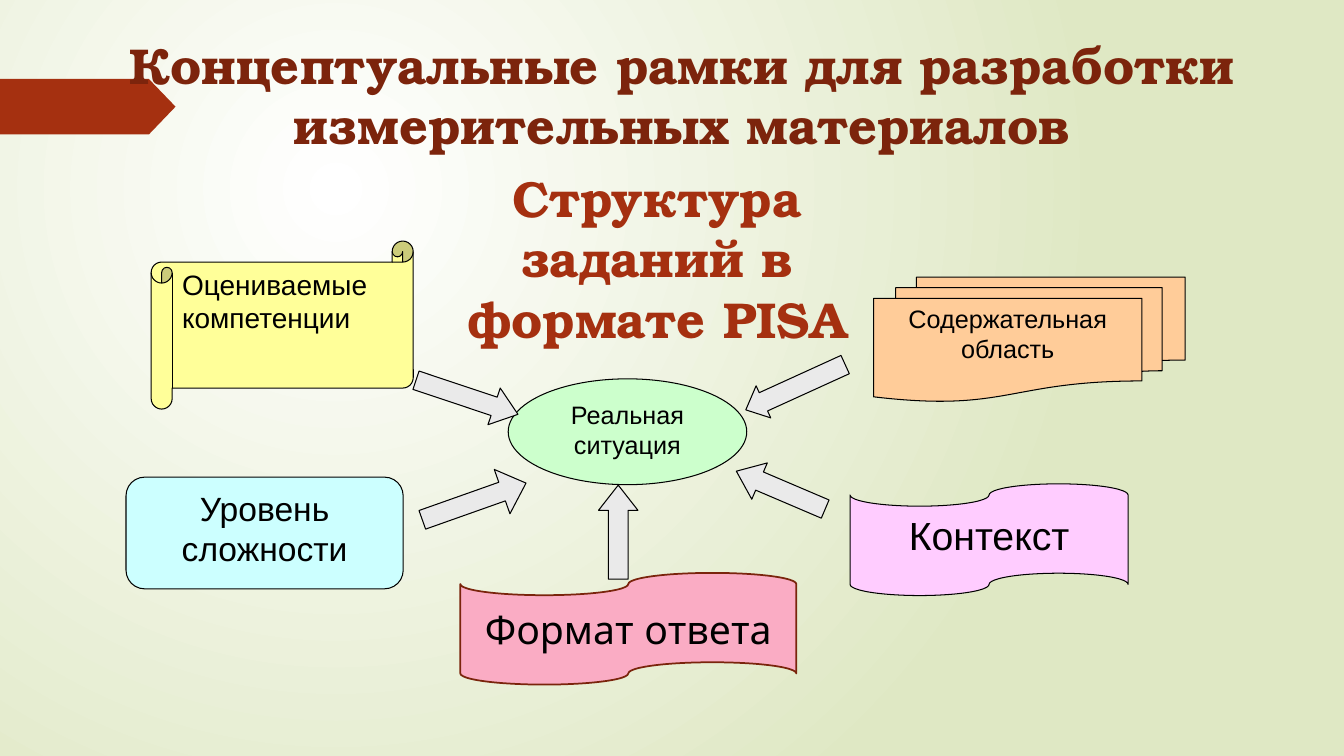
import pptx
import pptx.util
import pptx.dml.color
import pptx.enum.shapes
import pptx.enum.text
import lxml.etree

KIND = pptx.enum.shapes.MSO_SHAPE
ALIGN = pptx.enum.text.PP_ALIGN
ANCHOR = pptx.enum.text.MSO_ANCHOR
COLS, ROWS = 160, 90
CELL = pptx.util.Inches(7.5) / ROWS
SERIF = "TeX Gyre Bonum"


def tint(code):
    return pptx.dml.color.RGBColor.from_string(code)


def grid(*cells):
    return [round(cell * CELL) for cell in cells]


def write(frame, text, size=18, font="Arial", color="000000", bold=False,
          align=ALIGN.CENTER, anchor=ANCHOR.TOP):
    frame.word_wrap = True
    frame.auto_size = pptx.enum.text.MSO_AUTO_SIZE.NONE
    frame.vertical_anchor = anchor
    para = frame.paragraphs[0]
    para.alignment = align
    run = para.add_run()
    run.text = text
    run.font.size = pptx.util.Pt(size)
    run.font.name = font
    run.font.bold = bold
    run.font.color.rgb = tint(color)


def draw(slide, kind, box, fill, line="000000", width=0.75):
    shape = slide.shapes.add_shape(kind, *grid(*box))
    shape.shadow.inherit = False
    shape.fill.solid()
    shape.fill.fore_color.rgb = tint(fill)
    if line:
        shape.line.color.rgb = tint(line)
        shape.line.width = pptx.util.Pt(width)
    else:
        shape.line.fill.background()
    return shape


def arrow(slide, kind, box, turn, shaft, head):
    shape = draw(slide, kind, box, "EAEAEA")
    shape.rotation = turn
    shape.adjustments[0] = shaft
    shape.adjustments[1] = head


def paint(slide):
    fill = slide.background.fill
    fill.gradient()
    for stop, code in zip(fill.gradient_stops, ("FFFFFF", "DFE8C4")):
        stop.color.rgb = tint(code)
    line = slide.element.xpath(".//p:bg//a:lin")[0]
    space = "{%s}" % line.nsmap["a"]
    glow = lxml.etree.Element(space + "path", {"path": "circle"})
    lxml.etree.SubElement(glow, space + "fillToRect",
                          l="50000", t="50000", r="100000", b="100000")
    line.getparent().replace(line, glow)


def head(slide):
    title = slide.shapes.title
    title.left, title.top, title.width, title.height = grid(11.4, 3.4, 139.6, 21.6)
    write(title.text_frame, "Концептуальные рамки для разработки измерительных материалов",
          size=36, font=SERIF, color="7C240C", bold=True)
    tag = draw(slide, KIND.PENTAGON, (0, 9.4, 20.9, 6.6), "A53010", line=None)
    tag.adjustments[0] = 0.48
    title.element.addprevious(tag.element)


def main():
    deck = pptx.Presentation()
    deck.slide_width, deck.slide_height = grid(COLS, ROWS)
    slide = deck.slides.add_slide(deck.slide_layouts[5])
    paint(slide)
    head(slide)

    nodes = [
        (KIND.FLOWCHART_ALTERNATE_PROCESS, (15, 56.8, 33, 13.3), "CCFFFF",
         "Уровень сложности", {"size": 24}),
        (KIND.OVAL, (60.5, 45.1, 28.4, 12.6), "CCFFCC", "Реальная ситуация", {}),
        (KIND.FLOWCHART_MULTIDOCUMENT, (104, 33, 37.1, 14.8), "FFCC99",
         "Содержательная область", {}),
        (KIND.FLOWCHART_PUNCHED_TAPE, (101.2, 57.6, 33.1, 13.3), "FFCCFF",
         "Контекст", {"size": 28}),
        (KIND.HORIZONTAL_SCROLL, (18, 28.7, 31.2, 20), "FFFF99",
         "Оцениваемые компетенции", {"size": 20, "align": ALIGN.LEFT}),
    ]
    for kind, box, fill, text, style in nodes:
        write(draw(slide, kind, box, fill).text_frame, text, **style)

    reply = draw(slide, KIND.FLOWCHART_PUNCHED_TAPE, (54.8, 68.2, 40, 13.3),
                 "FAACC4", line="7A240C", width=1.25)
    write(reply.text_frame, "Формат ответа", size=28, font="Quicksand",
          anchor=ANCHOR.MIDDLE)

    arrows = [
        (KIND.RIGHT_ARROW, (49.9, 56.9, 13.1, 5.6), 340.5, 0.42, 0.54),
        (KIND.RIGHT_ARROW, (49.2, 45, 12.8, 4.6), 18.5, 0.5, 0.65),
        (KIND.LEFT_ARROW, (88.2, 44, 13, 4.2), 335.5, 0.57, 0.55),
        (KIND.LEFT_ARROW, (68, 61, 11.2, 4.7), 90, 0.5, 0.64),
        (KIND.LEFT_ARROW, (87.2, 56, 11.5, 4.7), 23.1, 0.5, 0.64),
    ]
    for item in arrows:
        arrow(slide, *item)

    label = slide.shapes.add_textbox(*grid(49.3, 19.3, 57.8, 23))
    write(label.text_frame, "Структура заданий в формате PISA",
          size=36, font=SERIF, color="A53010", bold=True)
    deck.save("out.pptx")


if __name__ == "__main__":
    main()
